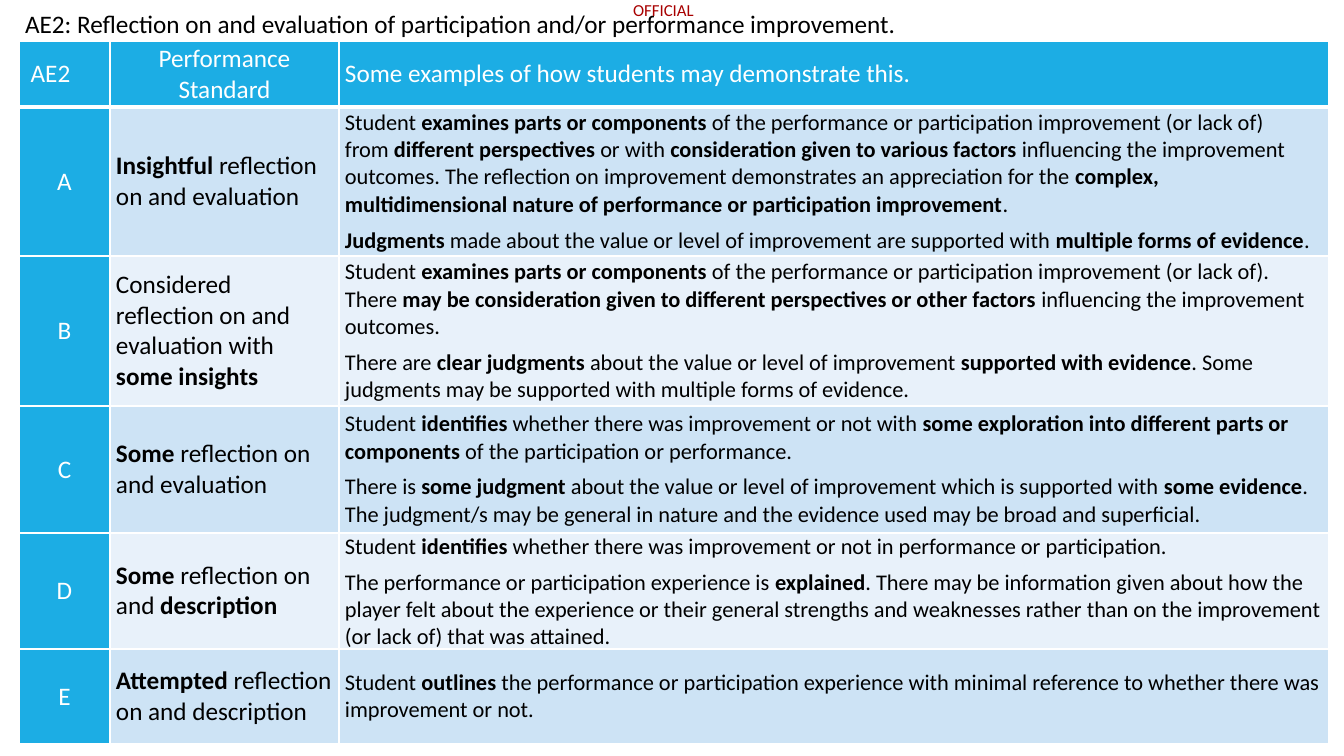
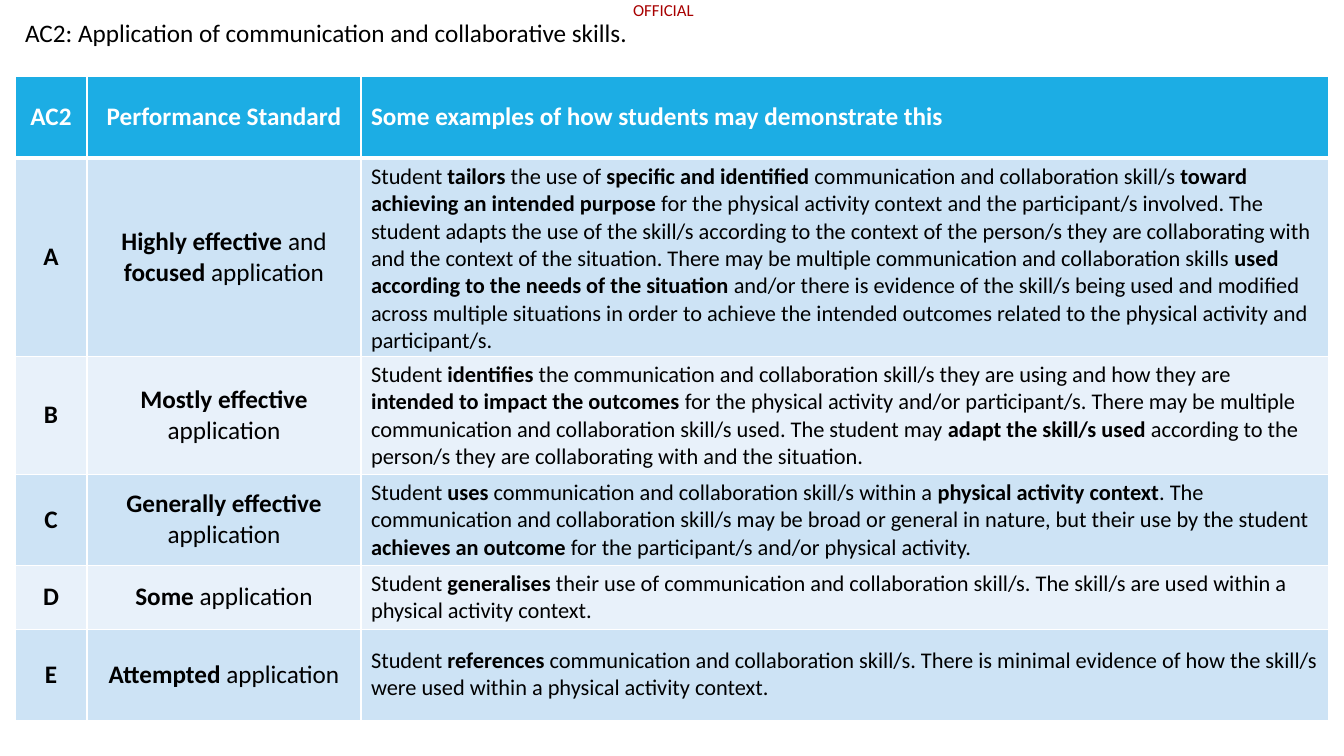
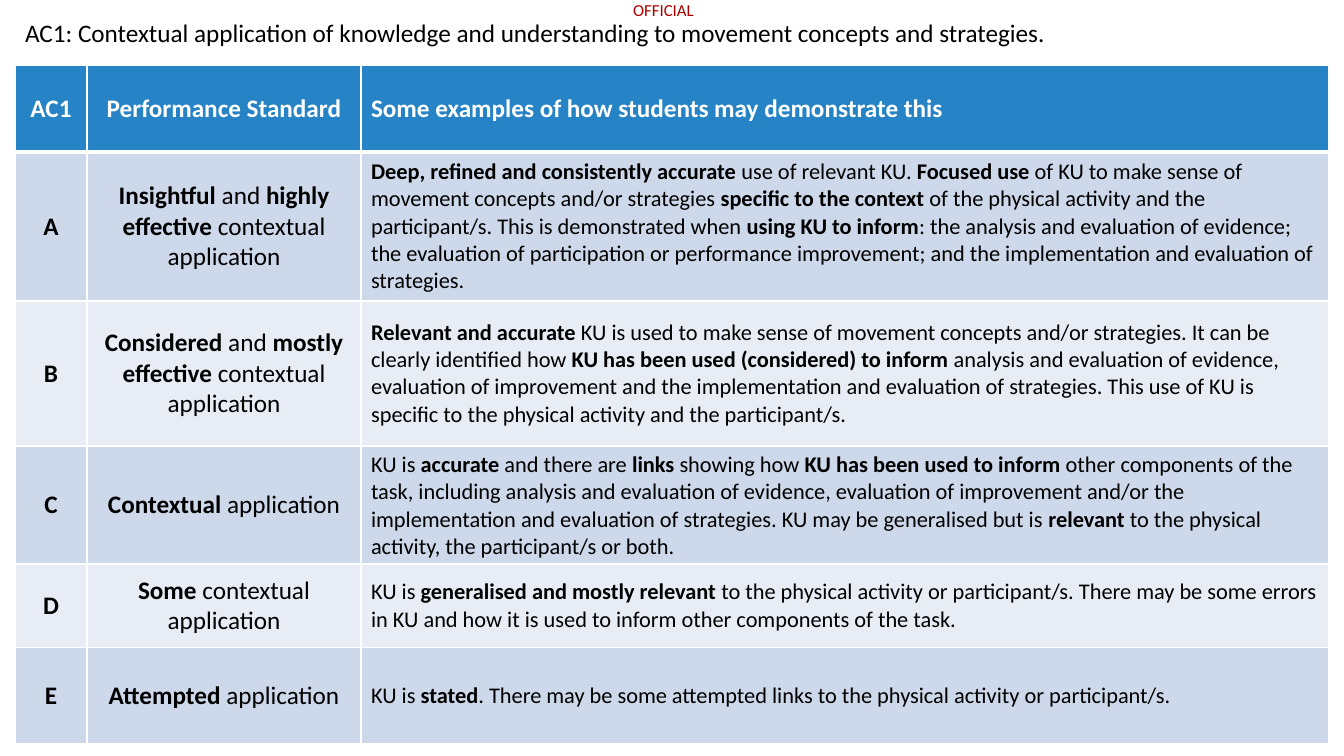
from lxml import etree
from pptx import Presentation
from pptx import util as u
from pptx.dml.color import RGBColor
from pptx.enum import text
from pptx.oxml import ns

INK = {"white": "FFFFFF", "black": "000000", "mark": "A80000",
       "sky": "1CADE4", "sky1": "CDE3F5", "sky2": "E8F1FA",
       "blue": "2683C6", "blue1": "CDD9EA", "blue2": "E8EDF5"}
FONT = "Calibri"
LEFT, MID = text.PP_ALIGN.LEFT, text.PP_ALIGN.CENTER


def px(n):
    return u.Emu(round(n * 914400 / 100.8))


def write(frame, lines, size, ink, align=LEFT, after=0, bold=False):
    """Fill a frame; ** switches bold on and off, a newline breaks the line."""
    for n, line in enumerate(lines):
        para = frame.paragraphs[0] if n == 0 else frame.add_paragraph()
        para.alignment = align
        para.space_after = u.Pt(after)
        for i, part in enumerate(line.split("**")):
            for j, bit in enumerate(part.split("\n")):
                if j:
                    para.add_line_break()
                if bit:
                    run = para.add_run()
                    run.text = bit
                    run.font.name = FONT
                    run.font.size = u.Pt(size)
                    run.font.bold = bold or i % 2 == 1
                    run.font.color.rgb = RGBColor.from_string(INK[ink])


# Content: one entry a slide, one row a grade from A to E
PAGES = [
    {"title": "AE2: Reflection on and evaluation of participation and/or performance improvement.",
     "top": 3, "at": (19, 41), "cols": (91, 229, 990),
     "rows": (66, 149, 150, 127, 116, 95),
     "tint": "sky", "dense": True,
     "head": (" AE2", "Performance Standard",
              "Some examples of how students may demonstrate this."),
     "body": [
         ("**Insightful** reflection on and evaluation",
          ["Student **examines parts or components **of the performance or participation "
           "improvement (or lack of) \nfrom **different perspectives **or with "
           "**consideration given to various factors **influencing the improvement outcomes. "
           "The reflection on improvement demonstrates an appreciation for the **complex, "
           "multidimensional nature of performance or participation improvement**.",
           "**Judgments** made about the value or level of improvement are supported with "
           "**multiple forms of evidence**."]),
         ("Considered reflection on and evaluation with **some insights**",
          ["Student **examines parts or components** of the performance or participation "
           "improvement (or lack of). There **may be consideration given to different "
           "perspectives or other factors **influencing the improvement outcomes.",
           "There are **clear judgments **about the value or level of improvement "
           "**supported with evidence**. Some judgments may be supported with multiple "
           "forms of evidence."]),
         ("**Some **reflection on and evaluation",
          ["Student **identifies** whether there was improvement or not with **some "
           "exploration into different parts or components** of the participation or "
           "performance.",
           "There is **some judgment **about the value or level of improvement which is "
           "supported with **some evidence**. The judgment/s may be general in nature and "
           "the evidence used may be broad and superficial."]),
         ("**Some** reflection on and **description**",
          ["Student **identifies** whether there was improvement or not in performance or "
           "participation.",
           "The performance or participation experience is **explained**. There may be "
           "information given about how the player felt about the experience or their "
           "general strengths and weaknesses rather than on the improvement (or lack of) "
           "that was attained."]),
         ("**Attempted** reflection on and description",
          ["Student **outlines** the performance or participation experience with minimal "
           "reference to whether there was improvement or not."])]},
    {"title": "AC2: Application of communication and collaborative skills.",
     "top": 12, "at": (15, 76), "cols": (72, 274, 968),
     "rows": (82, 198, 118, 91, 64, 91),
     "tint": "sky", "dense": False,
     "head": ("AC2", "Performance Standard",
              "Some examples of how students may demonstrate this"),
     "body": [
         ("**Highly effective **and **focused **application",
          ["Student **tailors** the use of **specific and identified** communication and "
           "collaboration skill/s **toward achieving an intended purpose** for the physical "
           "activity context and the participant/s involved. The student adapts the use of "
           "the skill/s according to the context of the person/s they are collaborating with "
           "and the context of the situation. There may be multiple communication and "
           "collaboration skills **used according to the needs of the situation** and/or "
           "there is evidence of the skill/s being used and modified across multiple "
           "situations in order to achieve the intended outcomes related to the physical "
           "activity and participant/s."]),
         ("**Mostly effective **application",
          ["Student **identifies** the communication and collaboration skill/s they are using "
           "and how they are **intended to impact the outcomes **for the physical activity "
           "and/or participant/s. There may be multiple communication and collaboration "
           "skill/s used. The student may **adapt the skill/s used **according to the "
           "person/s they are collaborating with and the situation."]),
         ("**Generally effective **application",
          ["Student **uses** communication and collaboration skill/s within a **physical "
           "activity context**. The communication and collaboration skill/s may be broad or "
           "general in nature, but their use by the student **achieves an outcome **for the "
           "participant/s and/or physical activity."]),
         ("**Some** application",
          ["Student **generalises** their use of communication and collaboration skill/s. "
           "The skill/s are used within a physical activity context."]),
         ("**Attempted** application",
          ["Student **references** communication and collaboration skill/s. There is minimal "
           "evidence of how the skill/s were used within a physical activity context."])]},
    {"title": "AC1: Contextual application of knowledge and understanding to movement "
              "concepts and strategies.",
     "top": 12, "at": (15, 65), "cols": (72, 274, 968),
     "rows": (87, 149, 145, 118, 84, 96),
     "tint": "blue", "dense": False,
     "head": ("AC1", "Performance Standard",
              "Some examples of how students may demonstrate this"),
     "body": [
         ("**Insightful** and **highly effective **contextual application",
          ["**Deep, refined and consistently accurate **use of relevant KU. **Focused use **of "
           "KU to make sense of movement concepts and/or strategies **specific to the "
           "context **of the physical activity and the participant/s. This is demonstrated "
           "when **using KU to inform**: the analysis and evaluation of evidence; the "
           "evaluation of participation or performance improvement; and the implementation "
           "and evaluation of strategies."]),
         ("**Considered** and **mostly effective** contextual application",
          ["**Relevant and accurate **KU is used to make sense of movement concepts and/or "
           "strategies. It can be clearly identified how **KU has been used (considered) to "
           "inform **analysis and evaluation of evidence, evaluation of improvement and the "
           "implementation and evaluation of strategies. This use of KU is specific to the "
           "physical activity and the participant/s."]),
         ("**Contextual** application",
          ["KU is **accurate** and there are **links** showing how **KU has been used to "
           "inform **other components of the task, including analysis and evaluation of "
           "evidence, evaluation of improvement and/or the implementation and evaluation of "
           "strategies. KU may be generalised but is **relevant** to the physical activity, "
           "the participant/s or both."]),
         ("**Some** contextual application",
          ["KU is **generalised and mostly relevant **to the physical activity or "
           "participant/s. There may be some errors in KU and how it is used to inform other "
           "components of the task."]),
         ("**Attempted** application",
          ["KU is **stated**. There may be some attempted links to the physical activity or "
           "participant/s."])]},
]

deck = Presentation()
deck.slide_width, deck.slide_height = px(1344), px(756)

for page in PAGES:
    slide = deck.slides.add_slide(deck.slide_layouts[5])
    tint, dense = page["tint"], page["dense"]

    # Marking at the top edge
    mark = slide.shapes.add_textbox(px(631), px(0), px(65), px(20)).text_frame
    mark.margin_left = mark.margin_right = mark.margin_top = mark.margin_bottom = 0
    write(mark, ["OFFICIAL"], 12, "mark", MID)

    # Title
    title = slide.shapes.title
    title.left, title.top, title.width, title.height = px(15), px(page["top"]), px(1314), px(40)
    title.text_frame.vertical_anchor = text.MSO_ANCHOR.TOP
    title.text_frame.auto_size = text.MSO_AUTO_SIZE.NONE
    write(title.text_frame, [page["title"]], 18, "black", after=6)

    # Table grid
    cols, rows = page["cols"], page["rows"]
    table = slide.shapes.add_table(len(rows), len(cols), *map(px, page["at"]),
                                   px(sum(cols)), px(sum(rows))).table
    table.horz_banding = False
    for col, wide in zip(table.columns, cols):
        col.width = px(wide)
    for row, high in zip(table.rows, rows):
        row.height = px(high)

    # Cells
    grid = [[[cell] for cell in page["head"]]]
    grid += [[[grade], [std], notes] for grade, (std, notes) in zip("ABCDE", page["body"])]
    for r, line in enumerate(grid):
        for c, lines in enumerate(line):
            cell = table.cell(r, c)
            cell.vertical_anchor = text.MSO_ANCHOR.MIDDLE
            if dense:
                cell.margin_left = cell.margin_right = px(6)
                cell.margin_top = cell.margin_bottom = 0

            # Borders come before the fill
            for side in "LRTB":
                width = 3 if r == 0 and side == "B" else 1
                edge = etree.SubElement(cell._tc.get_or_add_tcPr(), ns.qn("a:ln" + side),
                                        w=str(u.Pt(width)))
                fill = etree.SubElement(edge, ns.qn("a:solidFill"))
                etree.SubElement(fill, ns.qn("a:srgbClr"), val=INK["white"])

            solid = r == 0 or (dense and c == 0)
            shade = tint if solid else tint + ("1" if r % 2 else "2")
            cell.fill.solid()
            cell.fill.fore_color.rgb = RGBColor.from_string(INK[shade])

            if dense:
                middle = (c == 0 and r > 0) or (c == 1 and r == 0)
            else:
                middle = c < 2
            write(cell.text_frame, lines,
                  size=16 if r and c == 2 else 18,
                  ink="white" if solid else "black",
                  align=MID if middle else LEFT,
                  after=6 if dense else 0,
                  bold=not dense and (r == 0 or c == 0))

deck.save("out.pptx")
